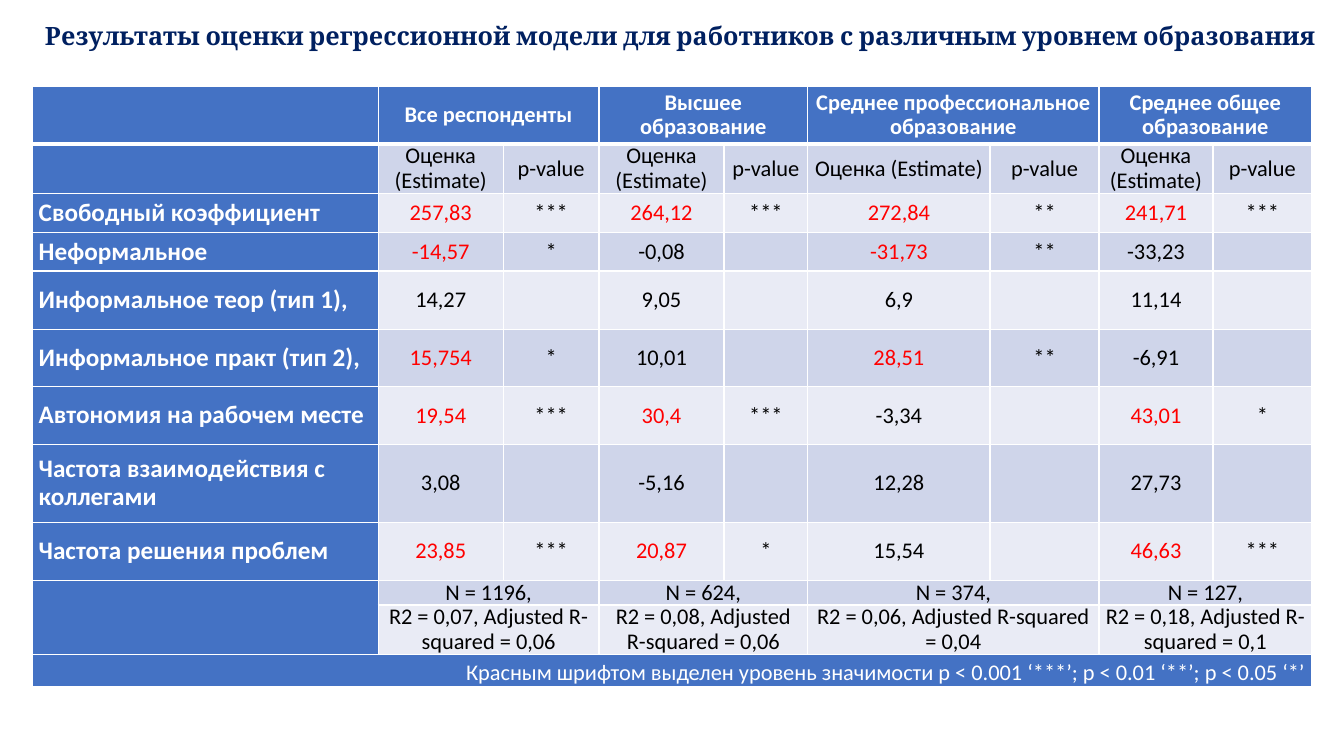
import dataclasses

import lxml.etree
import pptx
import pptx.dml.color
import pptx.enum.text
import pptx.oxml.ns
import pptx.util

Pt = pptx.util.Pt
ALIGN = pptx.enum.text.PP_ALIGN
MIDDLE = pptx.enum.text.MSO_ANCHOR.MIDDLE

TITLE = "Результаты оценки регрессионной модели для работников с различным уровнем образования"
GROUPS = [
    ("Все респонденты", "N = 1196,", "R2 = 0,07, Adjusted R-squared = 0,06"),
    ("Высшее образование", "N = 624,", "R2 = 0,08, Adjusted R-squared = 0,06"),
    ("Среднее профессиональное образование", "N = 374,", "R2 = 0,06, Adjusted R-squared = 0,04"),
    ("Среднее общее образование", "N = 127,", "R2 = 0,18, Adjusted R-squared = 0,1"),
]
MEASURES = ("Оценка (Estimate)", "p-value")
# Each factor: label, then (estimate, significance) for every group.
FACTORS = [
    ("Свободный коэффициент", ("257,83", "***"), ("264,12", "***"), ("272,84", "**"), ("241,71", "***")),
    ("Неформальное", ("-14,57", "*"), ("-0,08", ""), ("-31,73", "**"), ("-33,23", "")),
    ("Информальное теор (тип 1),", ("14,27", ""), ("9,05", ""), ("6,9", ""), ("11,14", "")),
    ("Информальное практ (тип 2),", ("15,754", "*"), ("10,01", ""), ("28,51", "**"), ("-6,91", "")),
    ("Автономия на рабочем месте", ("19,54", "***"), ("30,4", "***"), ("-3,34", ""), ("43,01", "*")),
    ("Частота взаимодействия с коллегами", ("3,08", ""), ("-5,16", ""), ("12,28", ""), ("27,73", "")),
    ("Частота решения проблем", ("23,85", "***"), ("20,87", "*"), ("15,54", ""), ("46,63", "***")),
]
LEGEND = "Красным шрифтом выделен уровень значимости p < 0.001 ‘***’; p < 0.01 ‘**’; p < 0.05 ‘*’"

COLUMN_WIDTHS = (247, 89.3, 68.4, 89.3, 59.8, 130.3, 77.8, 81.4, 70.6)
ROW_HEIGHTS = (41.5, 34.5, 28, 27.5, 41.5, 41, 41.5, 55.5, 41.5, 17.5, 35, 23)
TABLE_LEFT, TABLE_TOP = 23.2, 61.4


@dataclasses.dataclass(frozen=True)
class Theme:
    title_font: str = "Cambria"
    table_font: str = "Calibri"
    title_color: str = "002060"
    header: str = "4472C4"
    bands: tuple = ("E9EBF5", "CFD5EA")
    white: str = "FFFFFF"
    text: str = "000000"
    significant: str = "FF0000"
    large: int = 18
    normal: int = 16


THEME = Theme()


def rgb(color):
    return pptx.dml.color.RGBColor.from_string(color)


def add_text(para, text, font, size, color, bold):
    span = para.add_run()
    span.text = text
    span.font.name = font
    span.font.size = Pt(size)
    span.font.bold = bold
    span.font.color.rgb = rgb(color)


def write(cell, text, color=THEME.text, size=THEME.normal, bold=False, align=ALIGN.CENTER, spacing=0.9):
    if not text:
        return
    para = cell.text_frame.paragraphs[0]
    para.alignment = align
    para.line_spacing = spacing
    add_text(para, text, THEME.table_font, size, color, bold)


def set_borders(cell, top, bottom):
    """Outline a cell in white; top and bottom are line widths in points."""
    properties = cell._tc.get_or_add_tcPr()
    for place, (side, width) in enumerate((("L", 1), ("R", 1), ("T", top), ("B", bottom))):
        line = lxml.etree.Element(pptx.oxml.ns.qn(f"a:ln{side}"), w=str(Pt(width)))
        fill = lxml.etree.SubElement(line, pptx.oxml.ns.qn("a:solidFill"))
        lxml.etree.SubElement(fill, pptx.oxml.ns.qn("a:srgbClr"), val=THEME.white)
        properties.insert(place, line)


def style_grid(table):
    last_row = len(ROW_HEIGHTS) - 1
    for column, width in zip(table.columns, COLUMN_WIDTHS):
        column.width = Pt(width)
    for row_index, height in enumerate(ROW_HEIGHTS):
        table.rows[row_index].height = Pt(height)
        for column_index in range(len(COLUMN_WIDTHS)):
            cell = table.cell(row_index, column_index)
            cell.margin_left = cell.margin_right = Pt(4.5)
            cell.margin_top = cell.margin_bottom = Pt(0)
            cell.vertical_anchor = MIDDLE
            is_header = column_index == 0 or row_index in (0, last_row)
            cell.fill.solid()
            cell.fill.fore_color.rgb = rgb(THEME.header if is_header else THEME.bands[row_index % 2])
            set_borders(cell, 3 if row_index == 1 else 1, 3 if row_index == 0 else 1)


def fill_table(table):
    size_row = 2 + len(FACTORS)
    fit_row, legend_row = size_row + 1, size_row + 2
    for group_index, (name, sample, fit) in enumerate(GROUPS):
        column = 1 + 2 * group_index
        for row in (0, size_row, fit_row):
            table.cell(row, column).merge(table.cell(row, column + 1))
        write(table.cell(0, column), name, THEME.white, bold=True)
        write(table.cell(size_row, column), sample)
        write(table.cell(fit_row, column), fit)
        for offset, measure in enumerate(MEASURES):
            write(table.cell(1, column + offset), measure)
        for row, factor in enumerate(FACTORS, start=2):
            estimate, stars = factor[1 + group_index]
            write(table.cell(row, column), estimate, THEME.significant if stars else THEME.text)
            write(table.cell(row, column + 1), stars)
    for row, factor in enumerate(FACTORS, start=2):
        write(table.cell(row, 0), factor[0], THEME.white, THEME.large, True, ALIGN.LEFT)
    table.cell(size_row, 0).merge(table.cell(fit_row, 0))
    table.cell(legend_row, 0).merge(table.cell(legend_row, len(COLUMN_WIDTHS) - 1))
    write(table.cell(legend_row, 0), LEGEND, THEME.white, align=ALIGN.RIGHT, spacing=1.15)


def add_title(page):
    box = page.shapes.title
    box.left, box.top, box.width, box.height = Pt(13.7), Pt(0), Pt(933.8), Pt(40.3)
    frame = box.text_frame
    frame.word_wrap = True
    frame.auto_size = pptx.enum.text.MSO_AUTO_SIZE.NONE
    frame.vertical_anchor = pptx.enum.text.MSO_ANCHOR.TOP
    para = frame.paragraphs[0]
    para.alignment = ALIGN.RIGHT
    para.line_spacing = 1.5
    add_text(para, TITLE, THEME.title_font, THEME.large, THEME.title_color, True)


def main():
    deck = pptx.Presentation()
    deck.slide_width, deck.slide_height = Pt(960), Pt(540)
    page = deck.slides.add_slide(deck.slide_layouts[5])
    add_title(page)
    table = page.shapes.add_table(
        len(ROW_HEIGHTS), len(COLUMN_WIDTHS), Pt(TABLE_LEFT), Pt(TABLE_TOP),
        Pt(sum(COLUMN_WIDTHS)), Pt(sum(ROW_HEIGHTS)),
    ).table
    table.horz_banding = False
    style_grid(table)
    fill_table(table)
    deck.save("out.pptx")


if __name__ == "__main__":
    main()
